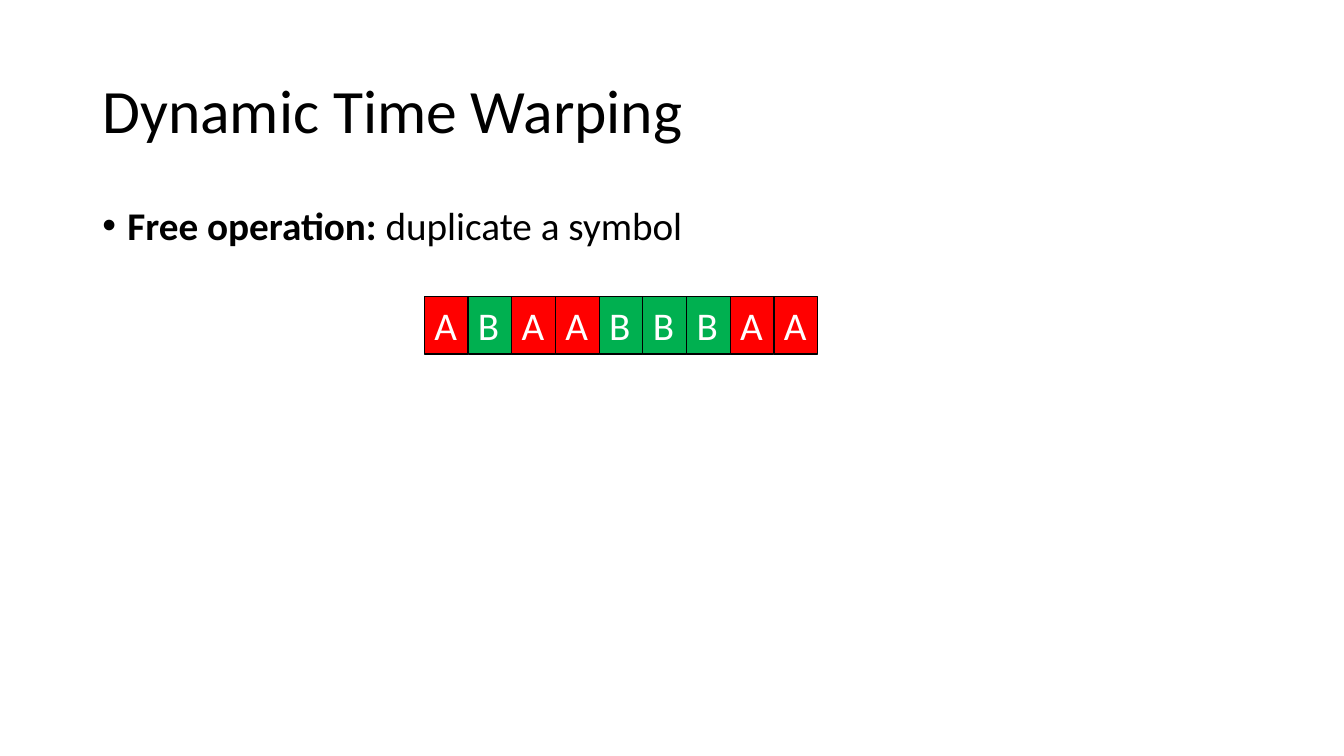
from lxml import etree
from pptx import Presentation
from pptx import util as u
from pptx.dml.color import RGBColor
from pptx.enum import shapes, text
from pptx.oxml.ns import qn

TITLE = "Dynamic Time Warping"
BULLET = [("Free operation:", True), (" duplicate a symbol", False)]
SEQUENCE = "ABAABBBAA"

THEME = {
    "font": "Calibri",
    "ink": "000000",
    "symbol_text": "FFFFFF",
    "symbol_fill": {"A": "FF0000", "B": "00B050"},
    "title_size": 44,
    "body_size": 28,
    "outline": 0.75,
}

SLIDE_SIZE = (960, 540)
TITLE_BOX = (66, 28.75, 828, 104.4)
BODY_BOX = (66, 143.75, 828, 342.6)
ROW_LEFT, ROW_TOP = 303.1, 211.7
CELL_WIDTH, CELL_HEIGHT = 31.22, 41.2
BULLET_INDENT = 18


def points(box):
    return [u.Pt(value) for value in box]


def write_text(shape, runs, *, size, color, anchor=text.MSO_ANCHOR.TOP,
               line_spacing=None, space_before=None):
    frame = shape.text_frame
    frame.word_wrap = True
    frame.vertical_anchor = anchor
    paragraph = frame.paragraphs[0]
    paragraph.alignment = text.PP_ALIGN.LEFT
    paragraph.line_spacing = line_spacing
    if space_before is not None:
        paragraph.space_before = u.Pt(space_before)
    for words, bold in runs:
        run = paragraph.add_run()
        run.text = words
        run.font.name = THEME["font"]
        run.font.size = u.Pt(size)
        run.font.bold = bold
        run.font.color.rgb = RGBColor.from_string(color)
    return paragraph


def add_bullet(paragraph):
    properties = paragraph._p.get_or_add_pPr()
    properties.set("marL", str(u.Pt(BULLET_INDENT)))
    properties.set("indent", str(-u.Pt(BULLET_INDENT)))
    etree.SubElement(properties, qn("a:buFont")).set("typeface", "Arial")
    etree.SubElement(properties, qn("a:buChar")).set("char", "•")


def add_symbol(slide, symbol, column):
    box = (ROW_LEFT + column * CELL_WIDTH, ROW_TOP, CELL_WIDTH, CELL_HEIGHT)
    cell = slide.shapes.add_shape(shapes.MSO_SHAPE.RECTANGLE, *points(box))
    cell.shadow.inherit = False
    cell.fill.solid()
    cell.fill.fore_color.rgb = RGBColor.from_string(THEME["symbol_fill"][symbol])
    cell.line.color.rgb = RGBColor.from_string(THEME["ink"])
    cell.line.width = u.Pt(THEME["outline"])
    write_text(cell, [(symbol, False)], size=THEME["body_size"],
               color=THEME["symbol_text"])
    cell.text_frame.auto_size = text.MSO_AUTO_SIZE.SHAPE_TO_FIT_TEXT


def main():
    presentation = Presentation()
    presentation.slide_width, presentation.slide_height = points(SLIDE_SIZE)
    slide = presentation.slides.add_slide(presentation.slide_layouts[6])

    title = slide.shapes.add_textbox(*points(TITLE_BOX))
    write_text(title, [(TITLE, False)], size=THEME["title_size"],
               color=THEME["ink"], anchor=text.MSO_ANCHOR.MIDDLE, line_spacing=0.9)

    for column, symbol in enumerate(SEQUENCE):
        add_symbol(slide, symbol, column)

    body = slide.shapes.add_textbox(*points(BODY_BOX))
    add_bullet(write_text(body, BULLET, size=THEME["body_size"], color=THEME["ink"],
                          line_spacing=0.9, space_before=10))

    presentation.save("out.pptx")


if __name__ == "__main__":
    main()
